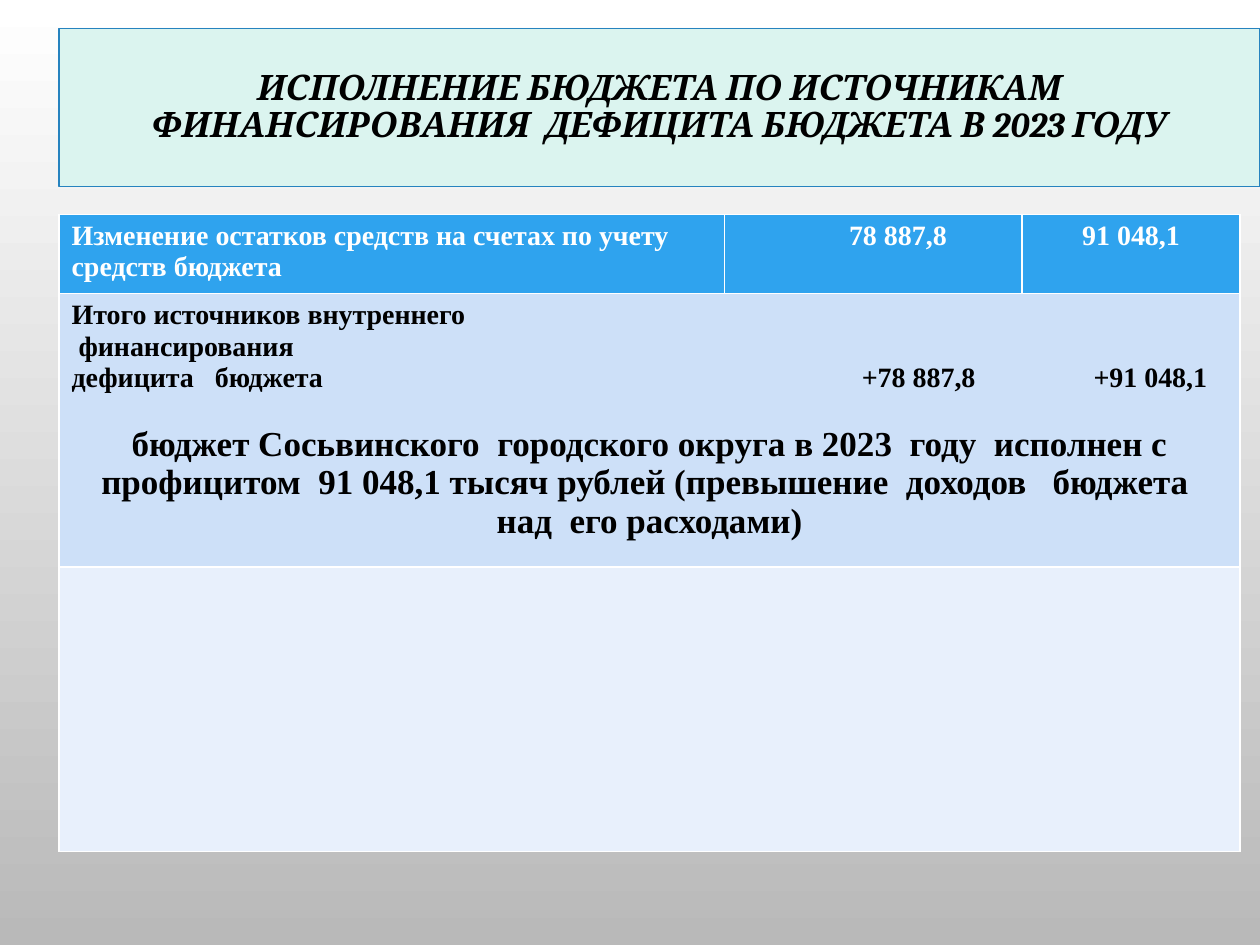
from dataclasses import dataclass

from lxml import etree
from pptx import Presentation
from pptx.dml.color import RGBColor
from pptx.enum.text import MSO_ANCHOR, MSO_AUTO_SIZE, PP_ALIGN
from pptx.oxml.ns import qn
from pptx.util import Cm, Pt

CENTER = PP_ALIGN.CENTER
LEFT = PP_ALIGN.LEFT
MIDDLE = MSO_ANCHOR.MIDDLE
NO_AUTOFIT = MSO_AUTO_SIZE.NONE
TITLE_ONLY_LAYOUT = 5


@dataclass(frozen=True)
class Theme:
    title_font: str = "Cambria"
    body_font: str = "Times New Roman"
    large: int = 20
    regular: int = 16
    dark: str = "000000"
    light: str = "FFFFFF"
    background_end: str = "B9B9B9"
    title_fill: str = "DBF4EF"
    title_line: str = "2683BF"
    header_fill: str = "2FA3EE"
    total_fill: str = "CDE0F8"
    empty_fill: str = "E8F0FC"


THEME = Theme()


def color(value):
    return RGBColor.from_string(value)


def add_run(paragraph, text, font_name, size, text_color, italic=False):
    run = paragraph.add_run()
    run.text = text
    run.font.name = font_name
    run.font.size = Pt(size)
    run.font.bold = True
    run.font.italic = italic
    run.font.color.rgb = color(text_color)


def add_tab_stops(paragraph, positions):
    tab_list = etree.SubElement(paragraph._p.get_or_add_pPr(), qn("a:tabLst"))
    for position in positions:
        etree.SubElement(tab_list, qn("a:tab"), pos=str(Cm(position)), algn="l")


def indent(paragraph, distance):
    properties = paragraph._p.get_or_add_pPr()
    properties.set("marL", str(Cm(distance)))
    properties.set("indent", "0")


def fill_cell(cell, fill_color):
    cell.fill.solid()
    cell.fill.fore_color.rgb = color(fill_color)


def paint_background(slide):
    fill = slide.background.fill
    fill.gradient()
    fill.gradient_angle = 270
    for stop, value in zip(fill.gradient_stops, (THEME.light, THEME.background_end)):
        stop.color.rgb = color(value)


def place_title(slide, left, top, width, height):
    title = slide.shapes.title
    title.left, title.top, title.width, title.height = map(Cm, (left, top, width, height))
    title.fill.solid()
    title.fill.fore_color.rgb = color(THEME.title_fill)
    title.line.color.rgb = color(THEME.title_line)
    title.line.width = Pt(0.75)
    frame = title.text_frame
    frame.word_wrap = True
    frame.auto_size = NO_AUTOFIT
    frame.vertical_anchor = MIDDLE
    paragraph = frame.paragraphs[0]
    paragraph.alignment = CENTER
    paragraph.line_spacing = 0.9
    add_run(
        paragraph,
        "ИСПОЛНЕНИЕ БЮДЖЕТА ПО ИСТОЧНИКАМ ФИНАНСИРОВАНИЯ  ДЕФИЦИТА БЮДЖЕТА В 2023 ГОДУ",
        THEME.title_font, THEME.large, THEME.dark, italic=True,
    )


def fill_header_row(table):
    entries = (
        ("Изменение остатков средств на счетах по учету средств бюджета", LEFT, 0),
        ("78 887,8", CENTER, 1),
        ("91 048,1", CENTER, 0),
    )
    for column, (text, alignment, distance) in enumerate(entries):
        cell = table.cell(0, column)
        fill_cell(cell, THEME.header_fill)
        paragraph = cell.text_frame.paragraphs[0]
        paragraph.alignment = alignment
        indent(paragraph, distance)
        add_run(paragraph, text, THEME.body_font, THEME.regular, THEME.light)


def fill_total_cell(cell):
    fill_cell(cell, THEME.total_fill)
    frame = cell.text_frame
    lines = (
        "Итого источников внутреннего",
        "финансирования",
        "дефицита   бюджета\t+78 887,8\t+91 048,1",
    )
    for number, text in enumerate(lines):
        paragraph = frame.paragraphs[0] if number == 0 else frame.add_paragraph()
        if number == 1:
            indent(paragraph, 0.14)
        if "\t" in text:
            add_tab_stops(paragraph, (15.93, 20.6))
        add_run(paragraph, text, THEME.body_font, THEME.regular, THEME.dark)

    conclusion = frame.add_paragraph()
    conclusion.alignment = CENTER
    conclusion.space_before = Pt(18)
    add_run(
        conclusion,
        "бюджет Сосьвинского  городского округа в 2023  году  исполнен с профицитом  "
        "91 048,1 тысяч рублей (превышение  доходов   бюджета  над  его расходами)",
        THEME.body_font, THEME.large, THEME.dark,
    )


def place_table(slide, left, top, column_widths, row_heights):
    table = slide.shapes.add_table(
        len(row_heights), len(column_widths),
        Cm(left), Cm(top), Cm(sum(column_widths)), Cm(sum(row_heights)),
    ).table
    for column, width in zip(table.columns, column_widths):
        column.width = Cm(width)
    for row, height in zip(table.rows, row_heights):
        row.height = Cm(height)
    for row in (1, 2):
        table.cell(row, 0).merge(table.cell(row, len(column_widths) - 1))
    fill_header_row(table)
    fill_total_cell(table.cell(1, 0))
    fill_cell(table.cell(2, 0), THEME.empty_fill)


def main():
    presentation = Presentation()
    presentation.slide_width = Cm(25.4)
    presentation.slide_height = Cm(19.05)
    slide = presentation.slides.add_slide(presentation.slide_layouts[TITLE_ONLY_LAYOUT])
    paint_background(slide)
    place_title(slide, 1.19, 0.58, 24.21, 3.18)
    place_table(slide, 1.19, 4.32, (13.41, 6, 4.4), (1.6, 5.51, 5.74))
    presentation.save("out.pptx")


if __name__ == "__main__":
    main()
